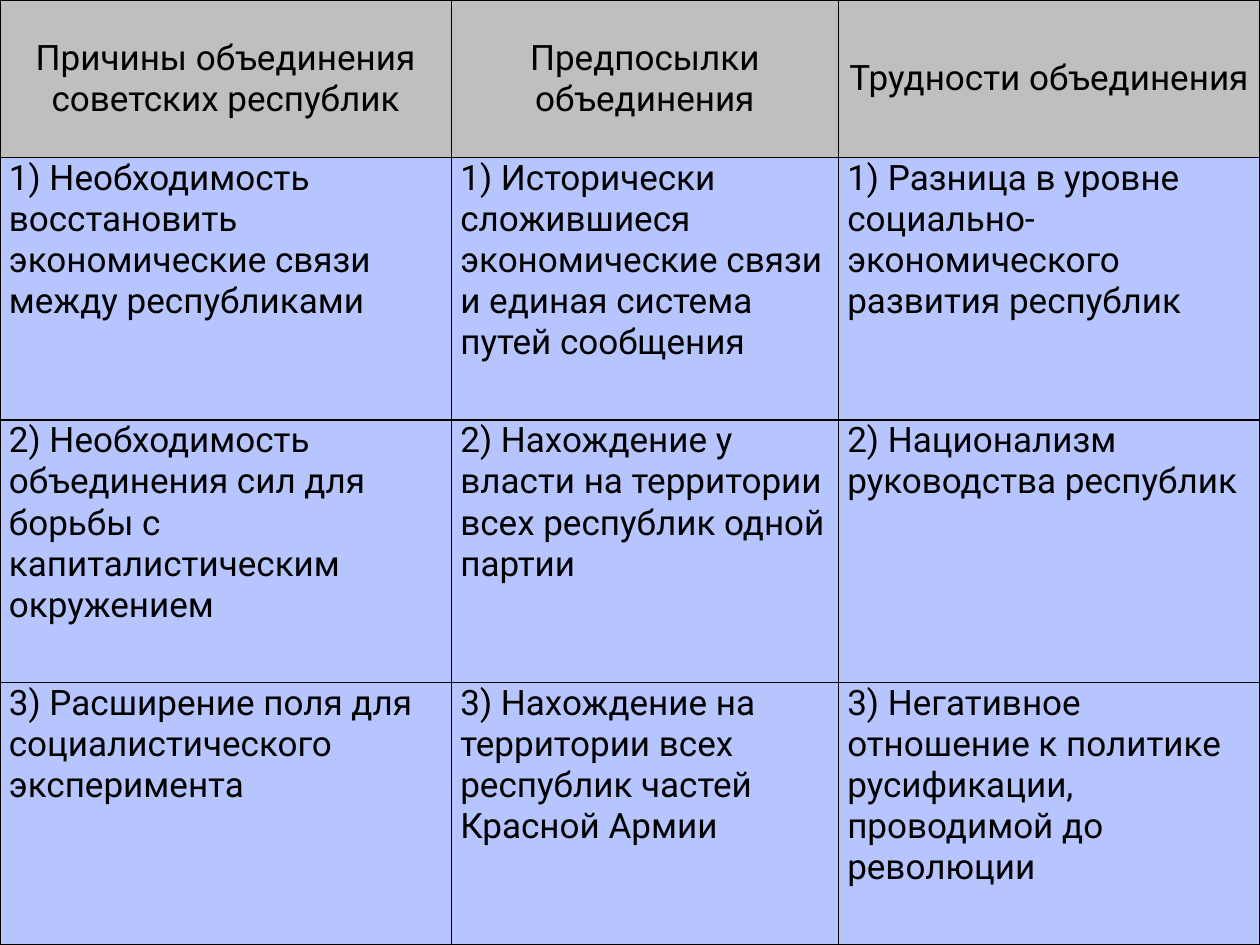
import lxml.etree
import pptx
import pptx.dml.color
import pptx.enum.shapes
import pptx.enum.text
import pptx.oxml.ns
import pptx.util
from pptx.util import Cm

BLACK = pptx.dml.color.RGBColor(0x00, 0x00, 0x00)
GREY = pptx.dml.color.RGBColor(0xBF, 0xBF, 0xBF)
LAVENDER = pptx.dml.color.RGBColor(0xB7, 0xC5, 0xFF)

PAGE_WIDTH, PAGE_HEIGHT = Cm(25.4), Cm(19.05)
COLUMN_WIDTHS = [Cm(9.1), Cm(7.8), Cm(8.5)]
HEADER_HEIGHT = Cm(3.18)
SIDE_MARGIN = Cm(0.18)
FONT_NAME = "Roboto"
FONT_SIZE = pptx.util.Pt(20)
BORDER_WIDTH = pptx.util.Pt(1)

ROWS = [
    ["Причины объединения советских республик",
     "Предпосылки объединения",
     "Трудности объединения"],
    ["1) Необходимость восстановить экономические связи между республиками",
     "1) Исторически сложившиеся экономические связи и единая система путей сообщения",
     "1) Разница в уровне социально-экономического развития республик"],
    ["2) Необходимость объединения сил для борьбы с капиталистическим окружением",
     "2) Нахождение у власти на территории всех республик одной партии",
     "2) Национализм руководства республик"],
    ["3) Расширение поля для социалистического эксперимента",
     "3) Нахождение на территории всех республик частей Красной Армии",
     "3) Негативное отношение к политике русификации, проводимой до революции"],
]


def add_backdrop(page):
    backdrop = page.shapes.add_shape(
        pptx.enum.shapes.MSO_SHAPE.RECTANGLE, 0, 0, PAGE_WIDTH, PAGE_HEIGHT)
    backdrop.shadow.inherit = False
    backdrop.fill.solid()
    backdrop.fill.fore_color.rgb = LAVENDER
    backdrop.line.fill.background()


def set_borders(cell):
    # Border lines must come before the fill in the cell properties
    properties = cell._tc.get_or_add_tcPr()
    qn = pptx.oxml.ns.qn
    for position, side in enumerate(("lnL", "lnR", "lnT", "lnB")):
        line = lxml.etree.Element(qn("a:" + side), w=str(BORDER_WIDTH))
        fill = lxml.etree.SubElement(line, qn("a:solidFill"))
        lxml.etree.SubElement(fill, qn("a:srgbClr"), val=str(BLACK))
        properties.insert(position, line)


def fill_cell(cell, text, is_header):
    cell.margin_left = cell.margin_right = SIDE_MARGIN
    cell.margin_top = cell.margin_bottom = 0
    cell.text_frame.text = text
    para = cell.text_frame.paragraphs[0]
    if is_header:
        cell.fill.solid()
        cell.fill.fore_color.rgb = GREY
        cell.vertical_anchor = pptx.enum.text.MSO_ANCHOR.MIDDLE
        para.alignment = pptx.enum.text.PP_ALIGN.CENTER
    else:
        cell.fill.background()
        cell.vertical_anchor = pptx.enum.text.MSO_ANCHOR.TOP
        para.alignment = pptx.enum.text.PP_ALIGN.LEFT
    font = para.runs[0].font
    font.name = FONT_NAME
    font.size = FONT_SIZE
    font.bold = False
    font.color.rgb = BLACK
    set_borders(cell)


def add_comparison_table(page):
    table = page.shapes.add_table(
        len(ROWS), len(COLUMN_WIDTHS), 0, 0, PAGE_WIDTH, PAGE_HEIGHT).table
    table.first_row = table.horz_banding = False
    for column, width in zip(table.columns, COLUMN_WIDTHS):
        column.width = width
    # Body rows share the height left below the header equally
    body_height = (PAGE_HEIGHT - HEADER_HEIGHT) // (len(ROWS) - 1)
    for row_index, texts in enumerate(ROWS):
        is_header = row_index == 0
        table.rows[row_index].height = HEADER_HEIGHT if is_header else body_height
        for column_index, text in enumerate(texts):
            fill_cell(table.cell(row_index, column_index), text, is_header)


def main():
    deck = pptx.Presentation()
    deck.slide_width, deck.slide_height = PAGE_WIDTH, PAGE_HEIGHT
    page = deck.slides.add_slide(deck.slide_layouts.get_by_name("Blank"))
    add_backdrop(page)
    add_comparison_table(page)
    deck.save("out.pptx")


if __name__ == "__main__":
    main()
